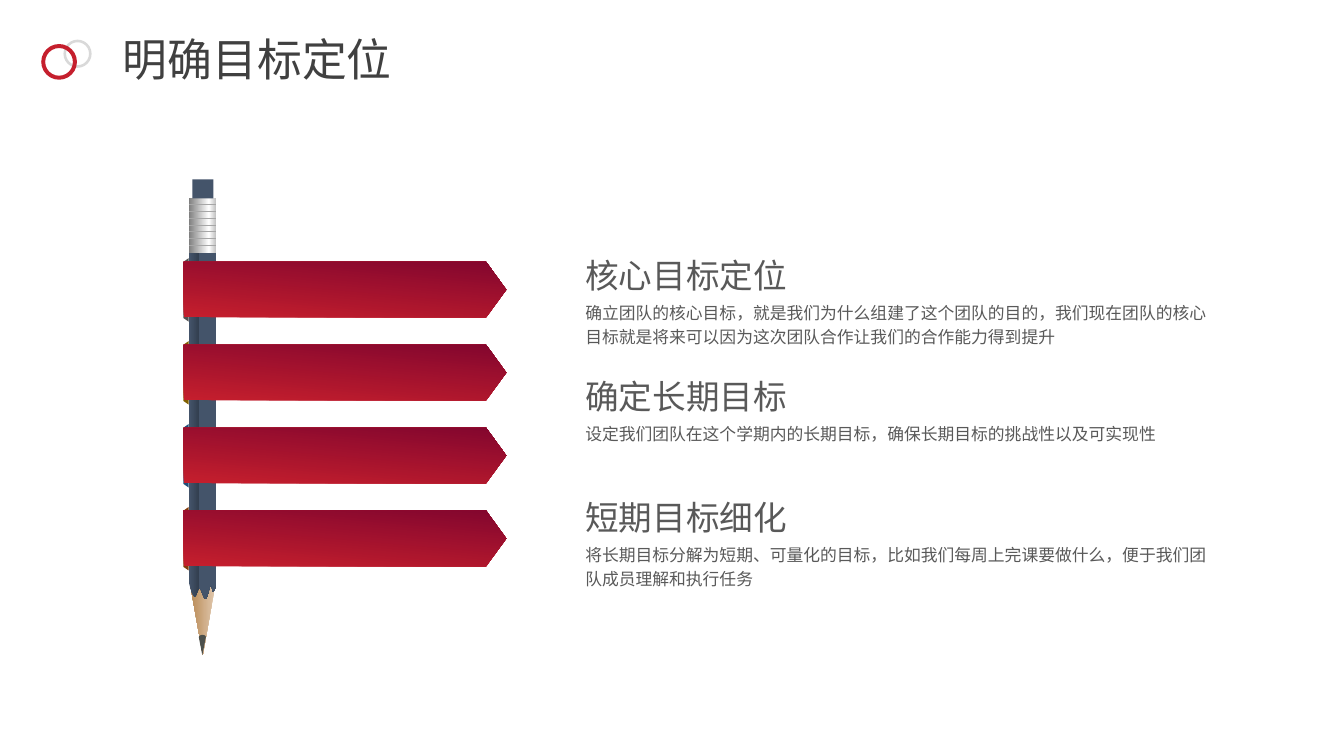
from dataclasses import dataclass

from pptx import Presentation
from pptx.dml.color import RGBColor as Rgb
from pptx.enum.shapes import MSO_CONNECTOR as Link, MSO_SHAPE as Kind
from pptx.enum.text import MSO_ANCHOR as Anchor, MSO_AUTO_SIZE as Fit, PP_ALIGN as Align
from pptx.oxml import parse_xml
from pptx.oxml.ns import nsdecls, qn
from pptx.util import Cm, Pt


@dataclass(frozen=True)
class Theme:
    font: str = "Arial"
    big: int = 32
    mid: int = 24
    small: int = 12
    title: str = "404040"
    text: str = "595959"
    red: str = "C51F2D"
    pale: str = "D9D9D9"
    navy: str = "44546A"
    lead: str = "4C504C"
    ring: str = "A6A6A6"
    folds: tuple = ("525252", "806000", "1F4E79", "843C0B")
    # Gradients: clockwise angle, then (position in percent, colour)
    ribbon: tuple = (275, (0, "C51F2D"), (100, "83062E"))
    wood: tuple = (90, (0, "E1C9AF"), (100, "B88954"))
    metal: tuple = (180, (0, "BFBFBF"), (27, "FFFFFF"), (100, "808080"))
    barrel: tuple = (0, (0, "44546A"), (34, "333F50"), (38, "44546A"), (100, "44546A"))


def write(frame, text, font, size, color, space=1.0, wrap=True, fit=Fit.NONE):
    """Put one formatted paragraph into a text frame."""
    frame.word_wrap, frame.auto_size = wrap, fit
    frame.vertical_anchor = Anchor.TOP
    para = frame.paragraphs[0]
    para.alignment, para.line_spacing = Align.LEFT, space
    run = para.add_run()
    run.text = text
    run.font.name, run.font.size = font, Pt(size)
    run.font.color.rgb = Rgb.from_string(color)


def curve(start, *bends):
    """Points along joined cubic curves; each bend is two handles and an end."""
    points = [start]
    for a, b, end in bends:
        for step in range(1, 9):
            t = step / 8
            u = 1 - t
            points.append(tuple(
                u**3 * p + 3 * u * u * t * q + 3 * u * t * t * r + t**3 * s
                for p, q, r, s in zip(start, a, b, end)))
        start = end
    return points


class Page:
    def __init__(self, slide, theme):
        self.slide, self.theme = slide, theme
        self.shapes = slide.shapes

    def paint(self, shape, fill):
        shape.shadow.inherit = False
        shape.line.fill.background()
        if isinstance(fill, str):
            shape.fill.solid()
            shape.fill.fore_color.rgb = Rgb.from_string(fill)
            return
        angle, *stops = fill
        shape.fill.gradient()
        shape.fill.gradient_angle = (360 - angle) % 360
        old = shape._element.spPr.find(qn("a:gradFill")).find(qn("a:gsLst"))
        marks = "".join(f'<a:gs pos="{at * 1000}"><a:srgbClr val="{color}"/></a:gs>'
                        for at, color in stops)
        new = parse_xml(f'<a:gsLst {nsdecls("a")}>{marks}</a:gsLst>')
        old.getparent().replace(old, new)

    def shape(self, kind, box, fill, adjust=None, turn=0):
        item = self.shapes.add_shape(kind, *map(Cm, box))
        if adjust is not None:
            item.adjustments[0] = adjust
        item.rotation = turn
        self.paint(item, fill)

    def outline(self, points, fill):
        first, *rest = [(Cm(x), Cm(y)) for x, y in points]
        path = self.shapes.build_freeform(*first, scale=1.0)
        path.add_line_segments(rest, close=True)
        self.paint(path.convert_to_shape(), fill)

    def line(self, x, y, end, color):
        item = self.shapes.add_connector(Link.STRAIGHT, Cm(x), Cm(y), Cm(end), Cm(y))
        item.line.color.rgb = Rgb.from_string(color)
        item.line.width = Pt(0.5)
        item._element.spPr.append(parse_xml(f'<a:effectLst {nsdecls("a")}/>'))

    def title(self, text, box):
        item = self.shapes.title
        item.left, item.top, item.width, item.height = map(Cm, box)
        write(item.text_frame, text, self.theme.font, self.theme.big,
              self.theme.title, wrap=False)

    def text(self, text, box, size):
        item = self.shapes.add_textbox(*map(Cm, box))
        write(item.text_frame, text, self.theme.font, size, self.theme.text,
              space=1.2, fit=Fit.SHAPE_TO_FIT_TEXT)


GOALS = [
    ("核心目标定位", 1.5, "确立团队的核心目标，就是我们为什么组建了这个团队的目的，"
     "我们现在团队的核心目标就是将来可以因为这次团队合作让我们的合作能力得到提升"),
    ("确定长期目标", 0.81, "设定我们团队在这个学期内的长期目标，确保长期目标的挑战性以及可实现性"),
    ("短期目标细化", 1.5, "将长期目标分解为短期、可量化的目标，"
     "比如我们每周上完课要做什么，便于我们团队成员理解和执行任务"),
]


def main():
    deck = Presentation()
    deck.slide_width, deck.slide_height = Cm(33.87), Cm(19.05)
    theme = Theme()
    page = Page(deck.slides.add_slide(deck.slide_layouts[5]), theme)

    # Heading with its two rings
    page.shape(Kind.DONUT, (1.6, 1, 0.71, 0.71), theme.pale, 0.092)
    page.shape(Kind.DONUT, (1.04, 1.11, 0.9, 0.9), theme.red, 0.112)
    page.title("明确目标定位", (2.84, 0.68, 7.34, 1.62))

    # Pencil: wood, barrel, metal, eraser, lead
    left, right = 4.77, 5.45
    page.shape(Kind.PENTAGON, (4.17, 15.24, 1.88, 0.66), theme.wood, 2.816, turn=90)
    edge = curve(
        (right, 14.63),
        ((5.44, 14.83), (5.41, 14.88), (5.36, 14.91)),
        ((5.33, 14.86), (5.36, 14.73), (5.31, 14.76)),
        ((5.28, 14.78), (5.23, 15.09), (5.18, 15.09)),
        ((5.13, 15.11), (5.08, 14.83), (5.03, 14.83)),
        ((4.98, 14.83), (4.95, 15.06), (4.9, 15.04)),
        ((4.83, 14.96), (4.8, 14.83), (left, 14.71)))
    page.outline([(left, 6.35), (right, 6.35)] + edge, theme.barrel)
    page.shape(Kind.RECTANGLE, (left, 5, right - left, 1.37), theme.metal)
    page.shape(Kind.RECTANGLE, (4.85, 4.52, 0.53, 0.48), theme.navy)
    cap = curve((5.01, 16.05),
                ((5.03, 16.02), (5.06, 16), (5.1, 16)),
                ((5.15, 16), (5.18, 16.02), (5.19, 16.05)))
    page.outline(cap + [(5.1, 16.51)], theme.lead)
    for row in range(7):
        page.line(left, 5.16 + 0.17 * row, right, theme.ring)

    # Ribbons and their folds
    pitch = 2.09
    for row, color in enumerate(theme.folds):
        page.shape(Kind.TRAPEZOID, (3.89, 7.24 + pitch * row, 1.6, 0.13),
                   color, 0.698, turn=270)
    for row in range(len(theme.folds)):
        page.shape(Kind.PENTAGON, (4.63, 6.6 + pitch * row, 8.13, 1.4),
                   theme.ribbon, 0.363)

    # Goals
    for row, (head, tall, body) in enumerate(GOALS):
        top = 6.1 + 3.05 * row
        page.text(head, (14.5, top, 16.54, 1.37), theme.mid)
        page.text(body, (14.5, top + 1.3, 16.54, tall), theme.small)

    deck.save("out.pptx")


if __name__ == "__main__":
    main()
